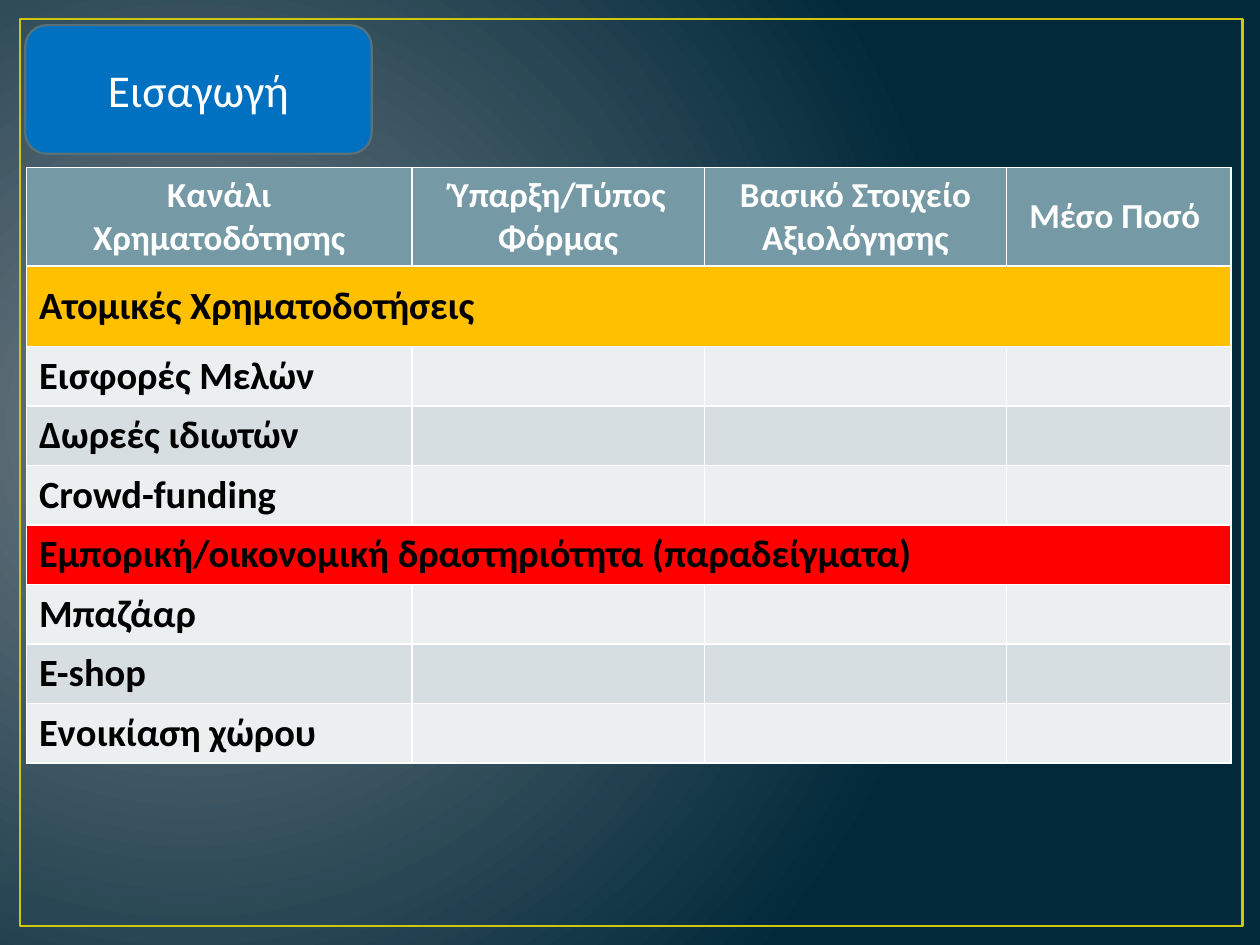
"""Build the introduction slide: a table of funding channels under a title badge."""
from dataclasses import dataclass

from lxml import etree
from pptx import Presentation
from pptx.dml.color import RGBColor
from pptx.enum.shapes import MSO_SHAPE
from pptx.enum.text import MSO_ANCHOR, MSO_AUTO_SIZE, PP_ALIGN
from pptx.oxml import parse_xml
from pptx.oxml.ns import nsdecls
from pptx.util import Inches, Pt

TITLE = "Εισαγωγή"
HEADERS = ["Κανάλι Χρηματοδότησης", "Ύπαρξη/Τύπος Φόρμας",
           "Βασικό Στοιχείο Αξιολόγησης", "Μέσο Ποσό "]
SECTIONS = [
    ("Ατομικές Χρηματοδοτήσεις", "FFC000", 0.64,
     ["Εισφορές Μελών", "Δωρεές ιδιωτών", "Crowd-funding"]),
    ("Εμπορική/οικονομική δραστηριότητα (παραδείγματα)", "FF0000", 0.47,
     ["Μπαζάαρ", "E-shop", "Ενοικίαση χώρου"]),
]

FRAME_BOX = (0.16, 0.15, 9.7, 7.2)
TITLE_BOX = (0.2, 0.2, 2.75, 1.02)
TABLE_CORNER = (0.21, 1.33)
COLUMN_WIDTHS = (3.06, 2.32, 2.4, 1.78)
HEADER_HEIGHT, ROW_HEIGHT = 0.78, 0.47


@dataclass(frozen=True)
class Theme:
    font: str = "Calibri"
    title_size: int = 26
    header_size: int = 20
    row_size: int = 22
    light: str = "FFFFFF"
    dark: str = "000000"
    frame: str = "CFC60D"
    badge: str = "0070C0"
    badge_line: str = "57727A"
    header: str = "759AA5"
    bands: tuple = ("ECEFF0", "D6DEE1")
    glow: str = "717C84"
    night: str = "01293A"


THEME = Theme()


def rgb(color):
    return RGBColor.from_string(color)


def inches(values):
    return [Inches(value) for value in values]


def set_background(slide):
    slide.background.fill.solid()
    solid = slide.background._cSld.bg.bgPr[0]
    gradient = parse_xml(
        f'<a:gradFill {nsdecls("a")} rotWithShape="1"><a:gsLst>'
        f'<a:gs pos="0"><a:srgbClr val="{THEME.glow}"/></a:gs>'
        f'<a:gs pos="100000"><a:srgbClr val="{THEME.night}"/></a:gs></a:gsLst>'
        '<a:path path="circle"><a:fillToRect l="15000" t="50000" r="85000" b="60000"/>'
        '</a:path></a:gradFill>')
    solid.getparent().replace(solid, gradient)


def style_text(paragraph, size, color, bold=False, align=PP_ALIGN.LEFT):
    paragraph.alignment = align
    font = paragraph.font
    font.name, font.size, font.bold = THEME.font, Pt(size), bold
    font.color.rgb = rgb(color)


def add_panel(slide, preset, box, line, width, fill=None):
    panel = slide.shapes.add_shape(preset, *inches(box))
    panel.shadow.inherit = False
    if fill:
        panel.fill.solid()
        panel.fill.fore_color.rgb = rgb(fill)
    else:
        panel.fill.background()
    panel.line.color.rgb = rgb(line)
    panel.line.width = Pt(width)
    return panel


def add_title(slide):
    title = slide.shapes.title
    frame = add_panel(slide, MSO_SHAPE.RECTANGLE, FRAME_BOX, THEME.frame, 1.5)
    badge = add_panel(slide, MSO_SHAPE.ROUNDED_RECTANGLE, TITLE_BOX,
                      THEME.badge_line, 1.25, THEME.badge)
    for panel in (frame, badge):
        title.element.addprevious(panel.element)
    title.left, title.top, title.width, title.height = inches(TITLE_BOX)
    text = title.text_frame
    text.text = TITLE
    text.word_wrap = True
    text.auto_size = MSO_AUTO_SIZE.NONE
    text.vertical_anchor = MSO_ANCHOR.MIDDLE
    style_text(text.paragraphs[0], THEME.title_size, THEME.light, align=PP_ALIGN.CENTER)


def table_rows():
    blanks = [""] * (len(HEADERS) - 1)
    yield HEADERS, THEME.header, HEADER_HEIGHT, "header"
    for heading, color, height, channels in SECTIONS:
        yield [heading] + blanks, color, height, "section"
        for index, channel in enumerate(channels):
            yield [channel] + blanks, THEME.bands[index % 2], ROW_HEIGHT, "channel"


def add_funding_table(slide):
    rows = list(table_rows())
    size = (sum(COLUMN_WIDTHS), sum(height for _, _, height, _ in rows))
    table = slide.shapes.add_table(len(rows), len(HEADERS),
                                   *inches(TABLE_CORNER + size)).table
    for column, width in zip(table.columns, COLUMN_WIDTHS):
        column.width = Inches(width)
    for row, (texts, fill, height, role) in zip(table.rows, rows):
        row.height = Inches(height)
        for cell, text in zip(row.cells, texts):
            cell.text = text
            cell.vertical_anchor = MSO_ANCHOR.MIDDLE
            cell.fill.solid()
            cell.fill.fore_color.rgb = rgb(fill)
            if role == "header":
                style_text(cell.text_frame.paragraphs[0], THEME.header_size,
                           THEME.light, True, PP_ALIGN.CENTER)
            else:
                style_text(cell.text_frame.paragraphs[0], THEME.row_size,
                           THEME.dark, True)
        if role == "section":
            row.cells[0].merge(row.cells[len(HEADERS) - 1])


def main():
    deck = Presentation()
    deck.slide_width, deck.slide_height = Inches(10), Inches(7.5)
    slide = deck.slides.add_slide(deck.slide_layouts.get_by_name("Title Only"))
    set_background(slide)
    add_title(slide)
    add_funding_table(slide)
    deck.save("out.pptx")


if __name__ == "__main__":
    main()
